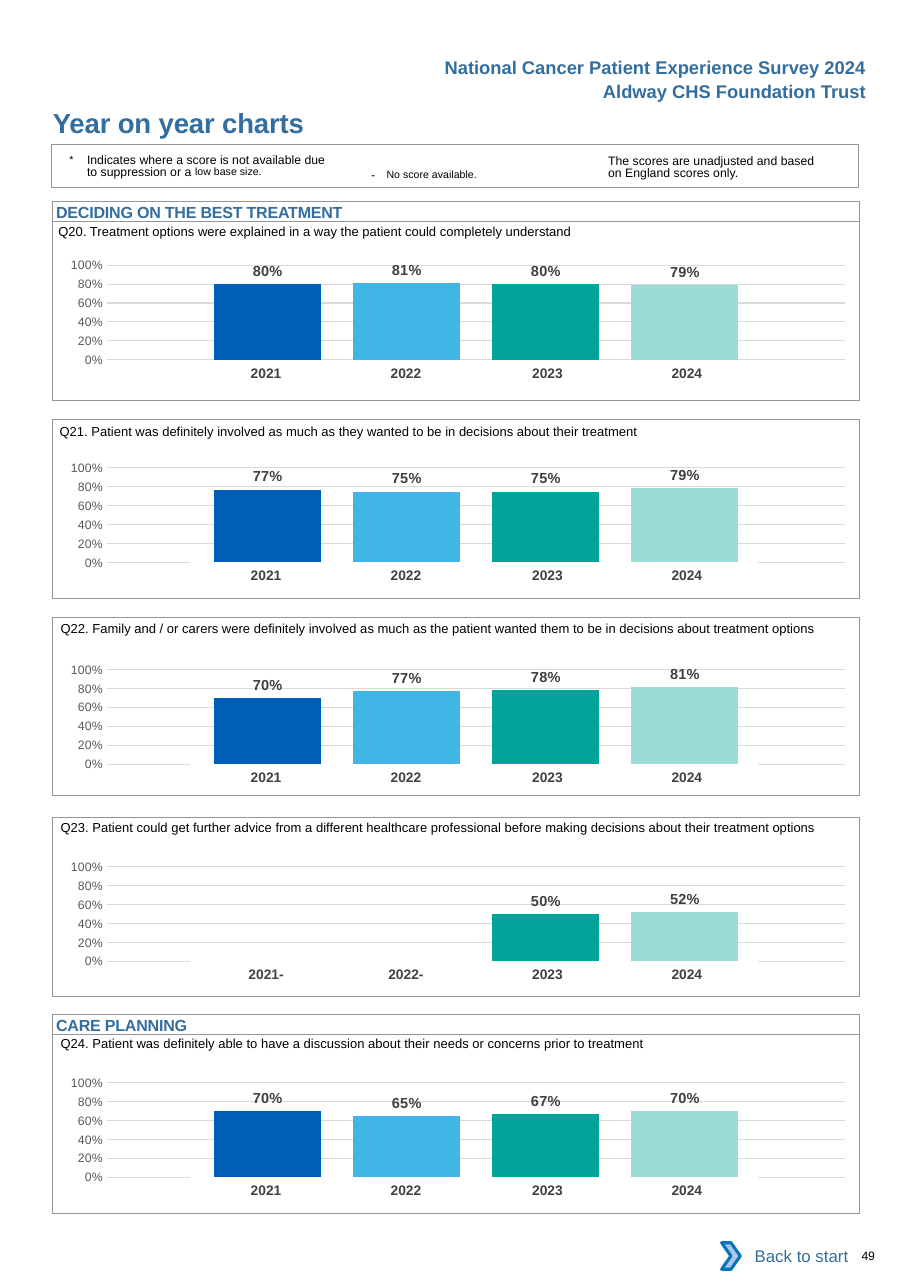
from lxml import etree
from pptx import Presentation
from pptx import util as u
from pptx.chart.data import CategoryChartData
from pptx.dml.color import RGBColor
from pptx.enum import chart as ch
from pptx.enum import shapes, text
from pptx.oxml.ns import qn

BLUE = RGBColor(0x33, 0x6E, 0x9F)
BLACK = RGBColor(0, 0, 0)
WHITE = RGBColor(0xFF, 0xFF, 0xFF)
BORDER = RGBColor(0x93, 0x95, 0x98)
GRID = RGBColor(0xD9, 0xD9, 0xD9)
AXIS_TEXT = RGBColor(0x59, 0x59, 0x59)
LABEL_TEXT = RGBColor(0x40, 0x40, 0x40)
YEAR_TEXT = RGBColor(0x41, 0x40, 0x42)
CHEVRON_FILL = RGBColor(0xA8, 0xC7, 0xE9)
CHEVRON_LINE = RGBColor(0x0A, 0x74, 0xBB)
YEAR_COLORS = {
    2021: RGBColor(0x00, 0x5E, 0xB8),
    2022: RGBColor(0x41, 0xB6, 0xE6),
    2023: RGBColor(0x00, 0xA4, 0x99),
    2024: RGBColor(0x9C, 0xDC, 0xD7),
}
LEFT, WIDTH, PANEL_HEIGHT = 0.48, 7.32, 1.62

# question, question left and top, panel top, chart top, score per year
QUESTIONS = [
    ("Q20. Treatment options were explained in a way the patient could completely understand",
     0.53, 1.94, 2.01, 2.22, (0.80, 0.81, 0.80, 0.79)),
    ("Q21. Patient was definitely involved as much as they wanted to be in decisions about "
     "their treatment",
     0.54, 3.75, 3.81, 4.06, (0.77, 0.75, 0.75, 0.79)),
    ("Q22. Family and / or carers were definitely involved as much as the patient wanted them "
     "to be in decisions about treatment options",
     0.55, 5.54, 5.60, 5.89, (0.70, 0.77, 0.78, 0.81)),
    ("Q23. Patient could get further advice from a different healthcare professional before "
     "making decisions about their treatment options",
     0.55, 7.35, 7.42, 7.68, (None, None, 0.50, 0.52)),
    ("Q24. Patient was definitely able to have a discussion about their needs or concerns "
     "prior to treatment",
     0.55, 9.31, 9.39, 9.64, (0.70, 0.65, 0.67, 0.70)),
]
SECTIONS = [("DECIDING ON THE BEST TREATMENT", 1.83), ("CARE PLANNING", 9.21)]


def box(x, y, w, h):
    return [u.Inches(v) for v in (x, y, w, h)]


def set_font(font, size, color, bold=False):
    font.name, font.size, font.bold = "Arial", u.Pt(size), bold
    font.color.rgb = color


def add_run(p, words, size, color=BLACK, bold=False, spacing=0, baseline=0):
    r = p.add_run()
    r.text = words
    set_font(r.font, size, color, bold)
    rPr = r._r.get_or_add_rPr()
    if spacing:
        rPr.set("spc", str(round(spacing * 100)))
    if baseline:
        rPr.set("baseline", str(baseline * 1000))


def set_frame(sp, margins, anchor=text.MSO_ANCHOR.TOP, align=text.PP_ALIGN.LEFT):
    tf = sp.text_frame
    tf.word_wrap = True
    tf.vertical_anchor = anchor
    tf.margin_left, tf.margin_top, tf.margin_right, tf.margin_bottom = box(*margins)
    p = tf.paragraphs[0]
    p.alignment = align
    return p


def add_text(s, at, margins=(0, 0, 0, 0), align=text.PP_ALIGN.LEFT):
    return set_frame(s.shapes.add_textbox(*box(*at)), margins, align=align)


def add_preset(s, kind, at, fill=None, line=None, weight=0.5):
    sp = s.shapes.add_shape(kind, *box(*at))
    sp.shadow.inherit = False
    if fill is None:
        sp.fill.background()
    else:
        sp.fill.solid()
        sp.fill.fore_color.rgb = fill
    if line is None:
        sp.line.fill.background()
    else:
        sp.line.color.rgb = line
        sp.line.width = u.Pt(weight)
    return sp


def add_frame(s, at, weight=0.5):
    return add_preset(s, shapes.MSO_SHAPE.RECTANGLE, at, line=BORDER, weight=weight)


def set_plot_layout(chart, **place):
    plot_area = chart._chartSpace.chart.plotArea
    for old in plot_area.findall(qn("c:layout")):
        plot_area.remove(old)
    layout = etree.Element(qn("c:layout"))
    plot_area.insert(0, layout)
    manual = etree.SubElement(layout, qn("c:manualLayout"))
    settings = {"layoutTarget": "inner", "xMode": "edge", "yMode": "edge", **place}
    for name, value in settings.items():
        etree.SubElement(manual, qn("c:" + name)).set("val", str(value))


def add_score_chart(s, top, scores):
    data = CategoryChartData(number_format="0%")
    data.categories = ["1"]
    for i, score in enumerate(scores, 1):
        data.add_series(f"Series {i}", [score])
    chart = s.shapes.add_chart(ch.XL_CHART_TYPE.COLUMN_CLUSTERED,
                               *box(0.39, top, WIDTH, 1.29), data).chart
    chart.has_title = chart.has_legend = False
    chart.font.name, chart.font.size = "Calibri", u.Pt(10)
    chart.font.color.rgb = BLACK
    set_plot_layout(chart, x=0.08, y=0.145, w=0.915, h=0.666)

    chart.category_axis.visible = False
    axis = chart.value_axis
    axis.minimum_scale, axis.maximum_scale, axis.major_unit = 0, 1, 0.2
    axis.major_tick_mark = axis.minor_tick_mark = ch.XL_TICK_MARK.NONE
    axis.format.line.fill.background()
    axis.major_gridlines.format.line.color.rgb = GRID
    axis.major_gridlines.format.line.width = u.Pt(0.75)
    axis.tick_labels.number_format = "0%"
    axis.tick_labels.number_format_is_linked = False
    set_font(axis.tick_labels.font, 8, AXIS_TEXT)

    plot = chart.plots[0]
    plot.vary_by_categories = False
    plot.gap_width, plot.overlap = 200, -30
    for series, color in zip(plot.series, YEAR_COLORS.values()):
        series.format.fill.solid()
        series.format.fill.fore_color.rgb = color
        labels = series.data_labels
        labels.show_value = True
        labels.position = ch.XL_LABEL_POSITION.OUTSIDE_END
        labels.number_format, labels.number_format_is_linked = "0%", False
        set_font(labels.font, 9.5, LABEL_TEXT, True)


def add_year_table(s, top, scores):
    table = s.shapes.add_table(1, 4, *box(1.73, top, 5.15, 0.27)).table
    table.first_row = table.horz_banding = False
    columns = zip(YEAR_COLORS, scores, (1.27, 1.27, 1.34, 1.27), (0, 0, 0.04, 0.12))
    for i, (year, score, width, right) in enumerate(columns):
        table.columns[i].width = u.Inches(width)
        cell = table.cell(0, i)
        cell.fill.background()
        cell.margin_left, cell.margin_right = u.Inches(0.1), u.Inches(right)
        p = cell.text_frame.paragraphs[0]
        p.alignment = text.PP_ALIGN.CENTER
        add_run(p, f"{year}-" if score is None else str(year), 9, YEAR_TEXT, True)


def add_section(s, name, top):
    sp = add_frame(s, (LEFT, top, WIDTH, 0.18))
    add_run(set_frame(sp, (0.03, 0.01, 0, 0)), name, 10.5, BLUE, True, -0.1)


def add_legend(s):
    p = add_text(s, (5.52, 1.38, 2.01, 0.27), (0, 0.03, 0, 0))
    p.line_spacing = u.Pt(8.1)
    add_run(p, "The scores are unadjusted and based on England scores only.", 8)

    p = add_text(s, (3.27, 1.41, 1.83, 0.24), (0.1, 0.05, 0.1, 0.05))
    add_run(p, "- ", 8, spacing=2.6)
    add_run(p, "No score available.", 12, baseline=3)

    p = add_text(s, (0.63, 1.38, 2.38, 0.27), (0, 0.03, 0, 0))
    p.line_spacing = u.Pt(8.1)
    pPr = p._p.get_or_add_pPr()
    pPr.set("marL", str(u.Inches(0.16)))
    pPr.set("indent", str(-u.Inches(0.16)))
    add_run(p, "*\t", 12, baseline=3)
    add_run(p, "Indicates where a score is not available due to suppression or a ", 8)
    add_run(p, "low base size.", 12, baseline=7)
    add_frame(s, (0.47, 1.31, WIDTH, 0.39), 0.75)


def main():
    prs = Presentation()
    prs.slide_width, prs.slide_height = u.Inches(8.26), u.Inches(11.69)
    s = prs.slides.add_slide(prs.slide_layouts[6])

    # Heading
    for words, top in (("National Cancer Patient Experience Survey 2024", 0.46),
                       ("Aldway CHS Foundation Trust", 0.68)):
        p = add_text(s, (3.92, top, 4.04, 0.3), (0.1, 0.05, 0.1, 0.05), text.PP_ALIGN.RIGHT)
        add_run(p, words, 12, BLUE, True)
    add_run(add_text(s, (0.48, 0.96, 4.5, 0.3)), "Year on year charts", 18, BLUE, True, -0.1)
    add_legend(s)

    # Question panels
    for question, left, top, panel_top, chart_top, scores in QUESTIONS:
        add_score_chart(s, chart_top, scores)
        add_year_table(s, chart_top + 1.05, scores)
        add_frame(s, (LEFT, panel_top, WIDTH, PANEL_HEIGHT))
        add_run(add_text(s, (left, top, 7.25, 0.24), (0, 0.09, 0, 0)), question, 8.5)
    for name, top in SECTIONS:
        add_section(s, name, top)

    # Footer
    back = add_preset(s, shapes.MSO_SHAPE.RECTANGLE, (6.62, 11.19, 1.18, 0.42), WHITE)
    p = set_frame(back, (0.1, 0.05, 0.1, 0.05), text.MSO_ANCHOR.MIDDLE, text.PP_ALIGN.RIGHT)
    add_run(p, "Back to start", 11, BLUE)
    add_preset(s, shapes.MSO_SHAPE.CHEVRON, (6.55, 11.28, 0.17, 0.24),
               CHEVRON_FILL, CHEVRON_LINE, 2)
    add_run(add_text(s, (7.82, 11.33, 0.41, 0.13)), "49", 8, spacing=-0.2)

    prs.save("out.pptx")


if __name__ == "__main__":
    main()
